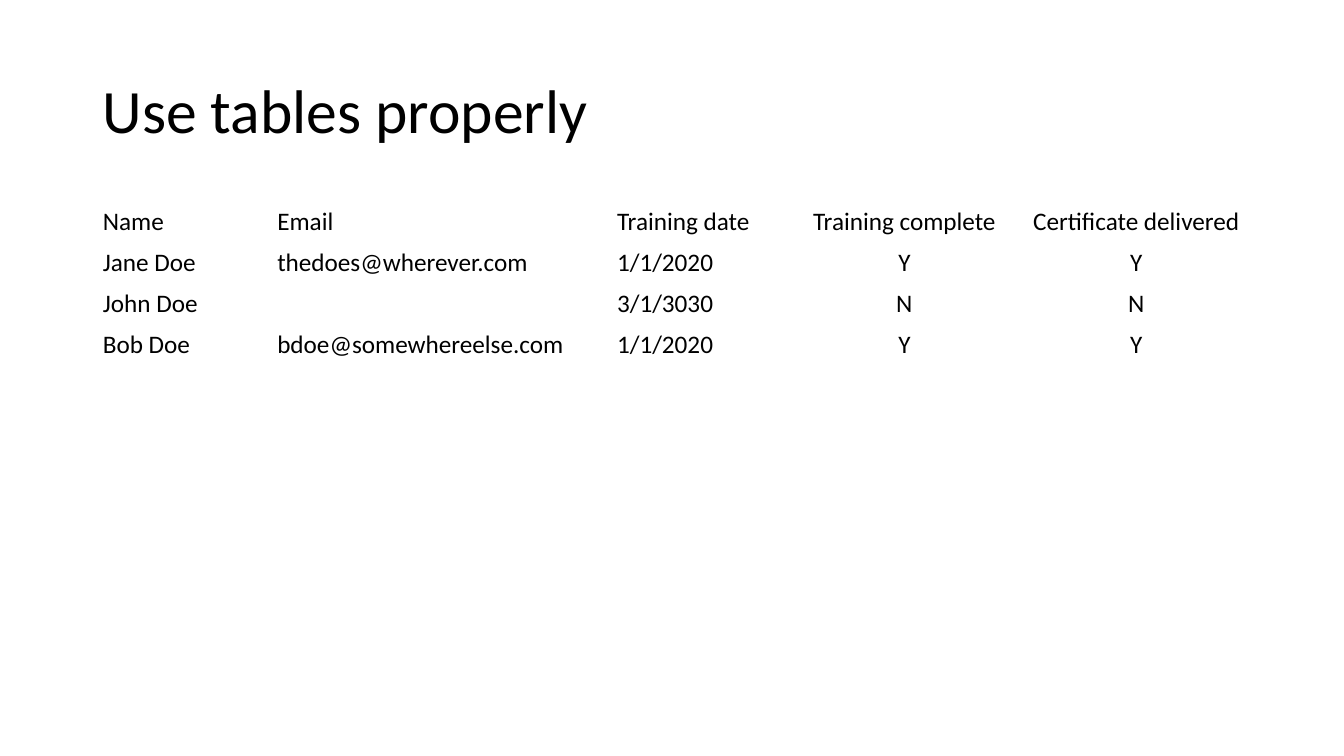
from pptx import Presentation
from pptx.dml.color import RGBColor
from pptx.enum.text import MSO_ANCHOR, PP_ALIGN
from pptx.util import Inches, Pt

FONT = "Calibri"
INK = "000000"
WIDTHS = [1.73, 3.37, 1.8, 2.3, 2.3]
ROWS = [
    ["Name", "Email", "Training date", "Training complete", "Certificate delivered"],
    ["Jane Doe", "thedoes@wherever.com", "1/1/2020", "Y", "Y"],
    ["John Doe", "", "3/1/3030", "N", "N"],
    ["Bob Doe", "bdoe@somewhereelse.com", "1/1/2020", "Y", "Y"],
]
LEFT, WIDTH = 0.92, 11.5
HIGH = 1.62


def color(code):
    return RGBColor.from_string(code)


def write(frame, text, size=18, align=PP_ALIGN.LEFT, space=1.0):
    para = frame.paragraphs[0]
    para.alignment = align
    para.line_spacing = space
    run = para.add_run()
    run.text = text
    font = run.font
    font.name, font.size, font.bold = FONT, Pt(size), False
    font.color.rgb = color(INK)


def add_title(slide, text):
    title = slide.shapes.title
    title.left, title.top = Inches(LEFT), Inches(0.4)
    title.width, title.height = Inches(WIDTH), Inches(1.45)
    title.text_frame.vertical_anchor = MSO_ANCHOR.MIDDLE
    write(title.text_frame, text, size=44, space=0.9)


def add_grid(slide, rows):
    frame = slide.shapes.add_table(len(rows), len(WIDTHS), Inches(LEFT),
                                   Inches(2), Inches(WIDTH), Inches(HIGH))
    table = frame.table
    table.first_row = table.horz_banding = False
    for col, width in zip(table.columns, WIDTHS):
        col.width = Inches(width)
    for r, row in enumerate(rows):
        table.rows[r].height = Inches(HIGH / len(rows))
        for c, text in enumerate(row):
            cell = table.cell(r, c)
            cell.fill.background()
            if text:
                align = PP_ALIGN.CENTER if c > 2 else PP_ALIGN.LEFT
                write(cell.text_frame, text, align=align)
    # Merged cell
    table.cell(1, 1).merge(table.cell(2, 1))


def main():
    deck = Presentation()
    deck.slide_width, deck.slide_height = Inches(13.33), Inches(7.5)
    slide = deck.slides.add_slide(deck.slide_layouts[5])

    # Title
    add_title(slide, "Use tables properly")

    # Table
    add_grid(slide, ROWS)

    deck.save("out.pptx")


if __name__ == "__main__":
    main()
